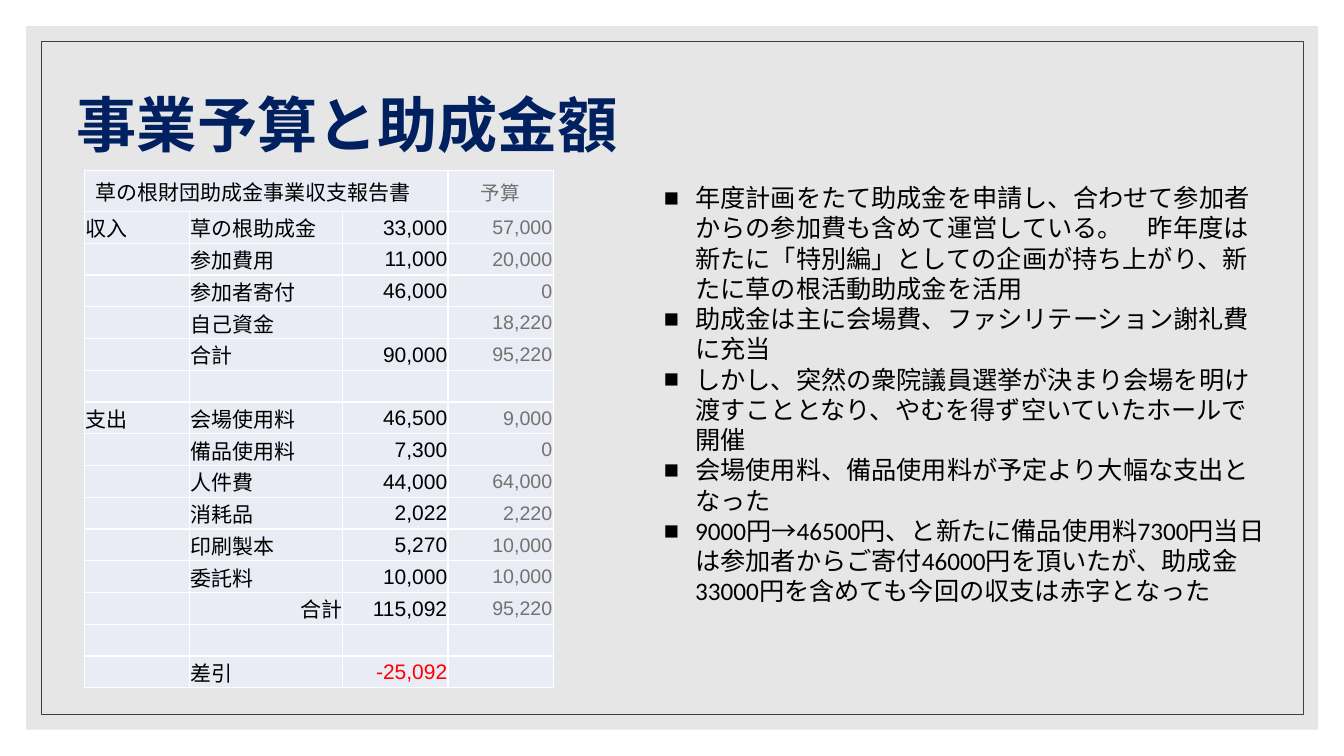
import dataclasses
import typing

import lxml.etree
import pptx
import pptx.dml.color
import pptx.enum.shapes
import pptx.enum.text
import pptx.oxml.ns
import pptx.util

Cm = pptx.util.Cm
Pt = pptx.util.Pt
RGB = pptx.dml.color.RGBColor
ALIGN = pptx.enum.text.PP_ALIGN
ANCHOR = pptx.enum.text.MSO_ANCHOR
qn = pptx.oxml.ns.qn

BLACK = RGB(0, 0, 0)
WHITE = RGB(0xFF, 0xFF, 0xFF)
NAVY = RGB(0x00, 0x20, 0x60)
PANEL = RGB(0xE7, 0xE6, 0xE6)
FRAME = RGB(0x3F, 0x3F, 0x3F)
CELL = RGB(0xE9, 0xEB, 0xF5)
GREY = RGB(0x76, 0x71, 0x71)
RED = RGB(0xFF, 0, 0)

TITLE = "事業予算と助成金額"
POINTS = [
    "年度計画をたて助成金を申請し、合わせて参加者からの参加費も含めて運営している。　昨年度は新たに「特別編」としての企画が持ち上がり、新たに草の根活動助成金を活用",
    "助成金は主に会場費、ファシリテーション謝礼費に充当",
    "しかし、突然の衆院議員選挙が決まり会場を明け渡すこととなり、やむを得ず空いていたホールで開催",
    "会場使用料、備品使用料が予定より大幅な支出となった",
    "9000円→46500円、と新たに備品使用料7300円当日は参加者からご寄付46000円を頂いたが、助成金33000円を含めても今回の収支は赤字となった",
]
ROWS = [
    ("草の根財団助成金事業収支報告書", "", "", "予算"),
    ("収入", "草の根助成金", "33,000", "57,000"),
    ("", "参加費用", "11,000", "20,000"),
    ("", "参加者寄付", "46,000", "0"),
    ("", "自己資金", "", "18,220"),
    ("", "合計", "90,000", "95,220"),
    ("", "", "", ""),
    ("支出", "会場使用料", "46,500", "9,000"),
    ("", "備品使用料", "7,300", "0"),
    ("", "人件費", "44,000", "64,000"),
    ("", "消耗品", "2,022", "2,220"),
    ("", "印刷製本", "5,270", "10,000"),
    ("", "委託料", "10,000", "10,000"),
    ("", "合計", "115,092", "95,220"),
    ("", "", "", ""),
    ("", "差引", "-25,092", ""),
]
EXPENSE_TOTAL = (13, 1)


@dataclasses.dataclass
class Column:
    width: float
    size: int
    color: RGB
    align: ALIGN


@dataclasses.dataclass
class Panel:
    left: float
    top: float
    width: float
    height: float
    fill: typing.Optional[RGB] = None
    line: typing.Optional[RGB] = None


COLUMNS = [
    Column(2.65, 15, BLACK, ALIGN.LEFT),
    Column(3.86, 15, BLACK, ALIGN.LEFT),
    Column(2.65, 15, BLACK, ALIGN.RIGHT),
    Column(2.65, 14, GREY, ALIGN.RIGHT),
]
PANELS = [
    Panel(0.66, 0.66, 32.56, 17.73, fill=PANEL),
    Panel(1.04, 1.04, 31.8, 16.97, line=FRAME),
]


def apply(obj: typing.Any, values: dict) -> None:
    for name, value in values.items():
        setattr(obj, name, value)


def place(sp: typing.Any, left: float, top: float, width: float, height: float) -> None:
    apply(sp, dict(left=Cm(left), top=Cm(top), width=Cm(width), height=Cm(height)))


def margins(left: float, top: float, right: float, bottom: float) -> dict:
    return dict(margin_left=Cm(left), margin_top=Cm(top),
                margin_right=Cm(right), margin_bottom=Cm(bottom))


def write(p: typing.Any, text: str, size: int, name: str, color: RGB, **font: typing.Any) -> None:
    r = p.add_run()
    r.text = text
    apply(r.font, dict(size=Pt(size), name=name, **font))
    r.font.color.rgb = color


def add_panel(slide: typing.Any, panel: Panel, depth: int) -> None:
    sp = slide.shapes.add_shape(pptx.enum.shapes.MSO_SHAPE.RECTANGLE, Cm(panel.left),
                                Cm(panel.top), Cm(panel.width), Cm(panel.height))
    sp.shadow.inherit = False
    for part, color in ((sp.fill, panel.fill), (sp.line.fill, panel.line)):
        if color is None:
            part.background()
        else:
            part.solid()
            part.fore_color.rgb = color
    if panel.line is not None:
        sp.line.width = Pt(0.75)
    sp._element.getparent().insert(2 + depth, sp._element)


def fill_title(sp: typing.Any) -> None:
    place(sp, 1.68, 1.32, 27.94, 3.81)
    tf = sp.text_frame
    apply(tf, dict(vertical_anchor=ANCHOR.MIDDLE, word_wrap=True,
                   auto_size=pptx.enum.text.MSO_AUTO_SIZE.NONE))
    p = tf.paragraphs[0]
    apply(p, dict(alignment=ALIGN.LEFT, line_spacing=0.9))
    write(p, TITLE, 43, "Arial", NAVY, bold=True)


def add_bullet(p: typing.Any) -> None:
    pPr = p._p.get_or_add_pPr()
    pPr.set("marL", str(Cm(0.79)))
    pPr.set("indent", str(-Cm(0.79)))
    color = lxml.etree.SubElement(pPr, qn("a:buClr"))
    lxml.etree.SubElement(color, qn("a:srgbClr"), val=str(BLACK))
    lxml.etree.SubElement(pPr, qn("a:buFont"), typeface="Arial")
    lxml.etree.SubElement(pPr, qn("a:buChar"), char="■")


def fill_body(sp: typing.Any) -> None:
    place(sp, 16.48, 4.6, 15.7, 12.88)
    tf = sp.text_frame
    apply(tf, dict(vertical_anchor=ANCHOR.TOP, word_wrap=True,
                   auto_size=pptx.enum.text.MSO_AUTO_SIZE.NONE,
                   **margins(0.25, 0, 0.25, 0.25)))
    for i, text in enumerate(POINTS):
        p = tf.add_paragraph() if i else tf.paragraphs[0]
        apply(p, dict(alignment=ALIGN.LEFT, line_spacing=1.0,
                      space_before=Pt(0), space_after=Pt(0)))
        add_bullet(p)
        write(p, text, 18, "Calibri", BLACK)


def add_borders(cell: typing.Any) -> None:
    tcPr = cell._tc.get_or_add_tcPr()
    for i, side in enumerate(("a:lnL", "a:lnR", "a:lnT", "a:lnB")):
        ln = lxml.etree.Element(qn(side), w=str(Pt(1)))
        fill = lxml.etree.SubElement(ln, qn("a:solidFill"))
        lxml.etree.SubElement(fill, qn("a:srgbClr"), val=str(WHITE))
        tcPr.insert(i, ln)


def add_budget(slide: typing.Any) -> None:
    width = sum(c.width for c in COLUMNS)
    tbl = slide.shapes.add_table(len(ROWS), len(COLUMNS), Cm(2.13), Cm(4.3),
                                 Cm(width), Cm(13.1)).table
    apply(tbl, dict(first_row=False, horz_banding=False))
    for column, c in zip(tbl.columns, COLUMNS):
        column.width = Cm(c.width)
    for y, row in enumerate(ROWS):
        tbl.rows[y].height = Cm(0.8 if y else 1.03)
        for x, (text, c) in enumerate(zip(row, COLUMNS)):
            cell = tbl.cell(y, x)
            inset = margins(0.28, 0.13, 0.28, 0.13) if (y, x) == (0, 0) else margins(0.02, 0.02, 0.02, 0)
            apply(cell, dict(vertical_anchor=ANCHOR.MIDDLE, **inset))
            cell.fill.solid()
            cell.fill.fore_color.rgb = CELL
            add_borders(cell)
            if text:
                p = cell.text_frame.paragraphs[0]
                p.alignment = c.align
                if (y, x) == EXPENSE_TOTAL:
                    p.alignment = ALIGN.RIGHT
                elif y == 0 and x:
                    p.alignment = ALIGN.CENTER
                write(p, text, c.size, "Arial", RED if text.startswith("-") else c.color)
    tbl.cell(0, 0).merge(tbl.cell(0, 2))


def main() -> None:
    prs = pptx.Presentation()
    apply(prs, dict(slide_width=Cm(33.87), slide_height=Cm(19.05)))
    slide = prs.slides.add_slide(prs.slide_layouts[1])
    for depth, panel in enumerate(PANELS):
        add_panel(slide, panel, depth)
    fill_title(slide.shapes.title)
    fill_body(slide.placeholders[1])
    add_budget(slide)
    prs.save("out.pptx")


if __name__ == "__main__":
    main()
